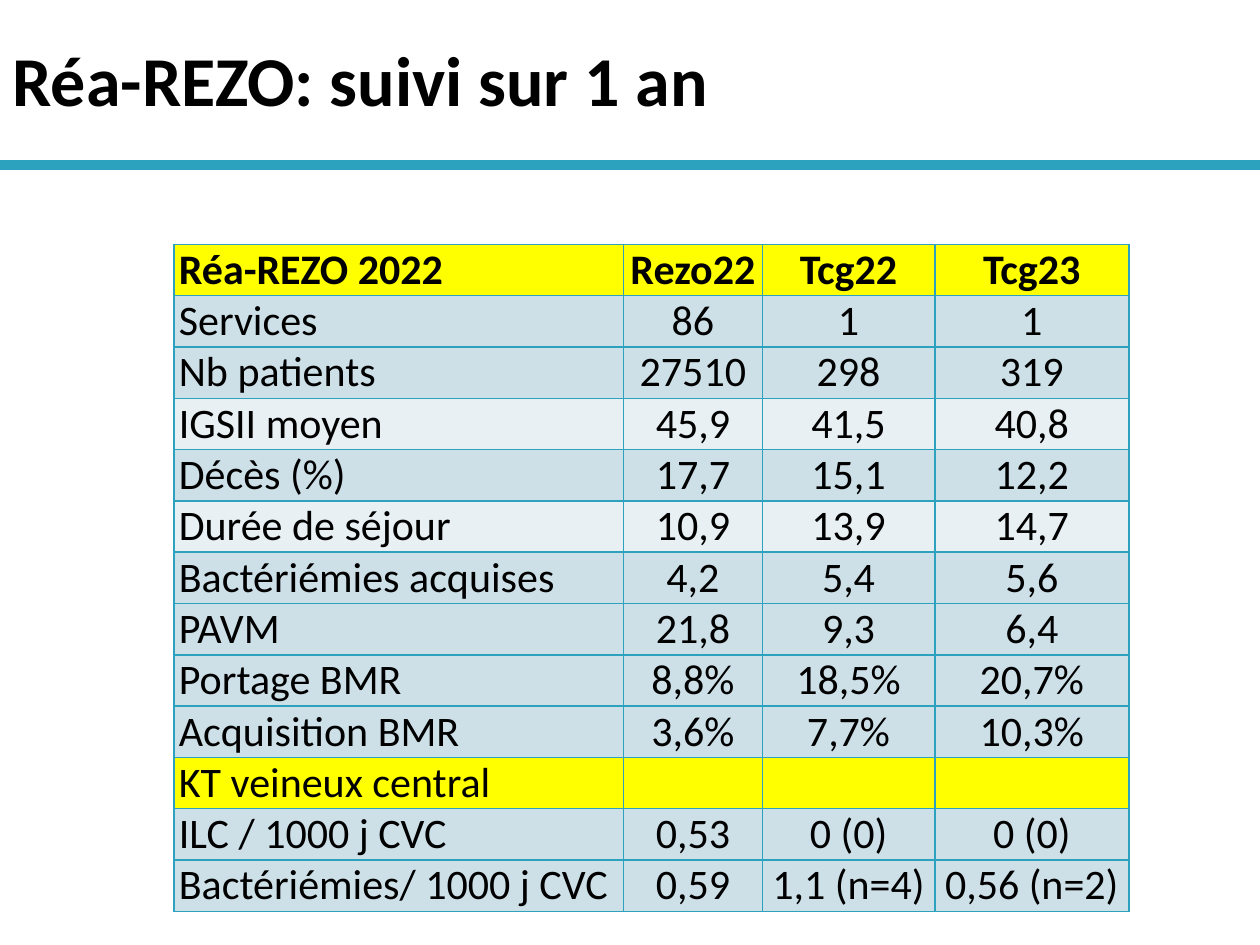
from dataclasses import dataclass

from lxml import etree
from pptx import Presentation
from pptx.dml.color import RGBColor
from pptx.enum.shapes import MSO_CONNECTOR
from pptx.enum.text import MSO_ANCHOR, PP_ALIGN
from pptx.oxml.ns import qn
from pptx.util import Inches, Pt

LEFT, CENTER = PP_ALIGN.LEFT, PP_ALIGN.CENTER
MIDDLE, BOTTOM = MSO_ANCHOR.MIDDLE, MSO_ANCHOR.BOTTOM

TITLE = "Réa-REZO: suivi sur 1 an"
HEADER, LIGHT, PLAIN = "header", "light", "plain"
ROWS = [
    (HEADER, "Réa-REZO 2022", "Rezo22", "Tcg22", "Tcg23"),
    (PLAIN, "Services", "86", "1", "1"),
    (PLAIN, "Nb patients", "27510", "298", "319"),
    (LIGHT, "IGSII moyen", "45,9", "41,5", "40,8"),
    (PLAIN, "Décès (%)", "17,7", "15,1", "12,2"),
    (LIGHT, "Durée de séjour", "10,9", "13,9", "14,7"),
    (PLAIN, "Bactériémies acquises", "4,2", "5,4", "5,6"),
    (PLAIN, "PAVM", "21,8", "9,3", "6,4"),
    (PLAIN, "Portage BMR", "8,8%", "18,5%", "20,7%"),
    (PLAIN, "Acquisition BMR", "3,6%", "7,7%", "10,3%"),
    (HEADER, "KT veineux central", "", "", ""),
    (PLAIN, "ILC / 1000 j CVC", "0,53", "0 (0)", "0 (0)"),
    (PLAIN, "Bactériémies/ 1000 j CVC", "0,59", "1,1 (n=4)", "0,56 (n=2)"),
]
FILLS = {HEADER: "FFFF00", LIGHT: "E8F0F4", PLAIN: "CDE0E8"}
COLUMN_WIDTHS = [3.57, 1.1, 1.37, 1.54]
ROW_HEIGHT = 0.4
CELL_MARGIN = 0.04
TABLE_LEFT, TABLE_TOP = 1.38, 1.94
PAGE_WIDTH, PAGE_HEIGHT = 10, 7.5
TITLE_HEIGHT, RULE_TOP = 1.25, 1.31


@dataclass(frozen=True)
class Theme:
    font: str = "Calibri"
    text: str = "000000"
    accent: str = "2DA2BF"
    title_size: int = 40
    table_size: int = 24
    rule_width: int = 6
    border_width: int = 1


THEME = Theme()


def write(frame, text, size, bold, align):
    para = frame.paragraphs[0]
    para.alignment = align
    span = para.add_run()
    span.text = text
    span.font.name = THEME.font
    span.font.size = Pt(size)
    span.font.bold = bold
    span.font.color.rgb = RGBColor.from_string(THEME.text)


def add_borders(cell):
    """Put the border lines ahead of the fill, as the file format requires."""
    properties = cell._tc.get_or_add_tcPr()
    for position, side in enumerate(("a:lnL", "a:lnR", "a:lnT", "a:lnB")):
        line = etree.Element(qn(side), w=str(Pt(THEME.border_width)))
        fill = etree.SubElement(line, qn("a:solidFill"))
        etree.SubElement(fill, qn("a:srgbClr"), val=THEME.accent)
        properties.insert(position, line)


def add_title(page):
    title = page.shapes.title
    title.left = title.top = 0
    title.width, title.height = Inches(PAGE_WIDTH), Inches(TITLE_HEIGHT)
    title.text_frame.vertical_anchor = MIDDLE
    write(title.text_frame, TITLE, THEME.title_size, True, LEFT)


def add_rule(page):
    top = Inches(RULE_TOP)
    rule = page.shapes.add_connector(
        MSO_CONNECTOR.STRAIGHT, 0, top, Inches(PAGE_WIDTH), top)
    rule.line.color.rgb = RGBColor.from_string(THEME.accent)
    rule.line.width = Pt(THEME.rule_width)
    etree.SubElement(rule._element.spPr, qn("a:effectLst"))


def anchor_for(row, column):
    """Bottom for the first heading, later row labels and column-two figures."""
    if column == 0:
        return BOTTOM if row == 0 or row >= 6 else MIDDLE
    return BOTTOM if column == 1 and row > 0 else MIDDLE


def add_results_table(page):
    table = page.shapes.add_table(
        len(ROWS), len(COLUMN_WIDTHS), Inches(TABLE_LEFT), Inches(TABLE_TOP),
        Inches(sum(COLUMN_WIDTHS)), Inches(ROW_HEIGHT * len(ROWS))).table
    table.horz_banding = False
    for column, width in zip(table.columns, COLUMN_WIDTHS):
        column.width = Inches(width)
    for r, (style, *texts) in enumerate(ROWS):
        table.rows[r].height = Inches(ROW_HEIGHT)
        for c, text in enumerate(texts):
            cell = table.cell(r, c)
            cell.margin_left = cell.margin_right = Inches(CELL_MARGIN)
            cell.margin_top = cell.margin_bottom = 0
            cell.vertical_anchor = anchor_for(r, c)
            cell.fill.solid()
            cell.fill.fore_color.rgb = RGBColor.from_string(FILLS[style])
            add_borders(cell)
            if text:
                write(cell.text_frame, text, THEME.table_size, r == 0,
                      CENTER if c else LEFT)


def main():
    deck = Presentation()
    deck.slide_width, deck.slide_height = Inches(PAGE_WIDTH), Inches(PAGE_HEIGHT)
    page = deck.slides.add_slide(deck.slide_layouts[5])
    add_rule(page)
    add_title(page)
    add_results_table(page)
    deck.save("out.pptx")


if __name__ == "__main__":
    main()
